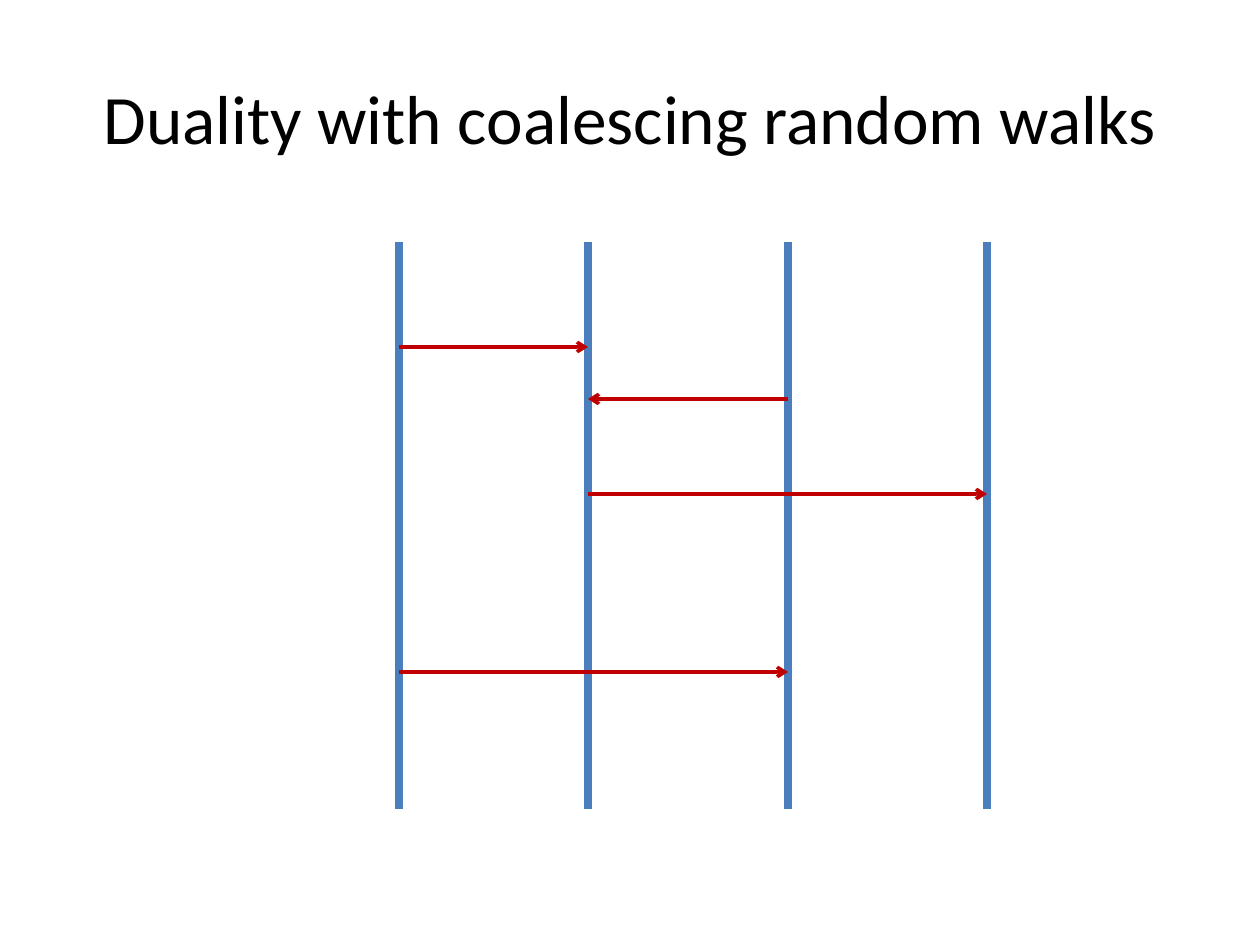
"""Build a slide on the duality of a voter model with coalescing random walks."""
import dataclasses

import lxml.etree
import pptx
import pptx.dml.color
import pptx.enum.shapes
import pptx.enum.text
import pptx.oxml.ns
import pptx.util

SCALE = 914400 / 126


@dataclasses.dataclass(frozen=True)
class Theme:
    """Hold the colours, font and sizes."""
    font: str = "Calibri"
    ink: str = "000000"
    site: str = "4B7EBC"
    jump: str = "C00000"
    title: float = 39.6
    thick: int = 5
    thin: int = 2


THEME = Theme()
SITES = (399, 588, 788, 987)
TOP, BASE = 242, 809
JUMPS = ((0, 1, 347), (2, 1, 399), (1, 3, 494), (0, 2, 672))


def emu(px):
    """Turn px into EMU."""
    return pptx.util.Emu(round(px * SCALE))


def color(code):
    """Turn a hex code into a colour."""
    return pptx.dml.color.RGBColor.from_string(code)


def add_title(slide, text, left, top, width, height):
    """Add the centred title."""
    box = slide.shapes.add_textbox(*map(emu, (left, top, width, height)))
    frame = box.text_frame
    frame.word_wrap = True
    frame.vertical_anchor = pptx.enum.text.MSO_ANCHOR.MIDDLE
    frame.text = text
    para = frame.paragraphs[0]
    para.alignment = pptx.enum.text.PP_ALIGN.CENTER
    font = para.runs[0].font
    font.name = THEME.font
    font.size = pptx.util.Pt(THEME.title)
    font.color.rgb = color(THEME.ink)


def add_line(slide, start, end, code, width):
    """Add a straight line without a shadow."""
    kind = pptx.enum.shapes.MSO_CONNECTOR.STRAIGHT
    line = slide.shapes.add_connector(kind, *map(emu, (*start, *end)))
    line.line.color.rgb = color(code)
    line.line.width = pptx.util.Pt(width)
    props = line._element.spPr
    lxml.etree.SubElement(props, pptx.oxml.ns.qn("a:effectLst"))
    return line


def add_arrow(slide, start, end):
    """Add a jump arrow with an open head at its end."""
    line = add_line(slide, start, end, THEME.jump, THEME.thin)
    stroke = line._element.spPr.find(pptx.oxml.ns.qn("a:ln"))
    lxml.etree.SubElement(stroke, pptx.oxml.ns.qn("a:tailEnd"), type="arrow")


def main():
    """Build and save the slide."""
    deck = pptx.Presentation()
    deck.slide_width, deck.slide_height = emu(1260), emu(945)
    slide = deck.slides.add_slide(deck.slide_layouts[6])
    add_title(slide, "Duality with coalescing random walks", 63, 38, 1134, 157)
    for x in SITES:
        add_line(slide, (x, TOP), (x, BASE), THEME.site, THEME.thick)
    for start, end, y in JUMPS:
        add_arrow(slide, (SITES[start], y), (SITES[end], y))
    deck.save("out.pptx")


if __name__ == "__main__":
    main()
